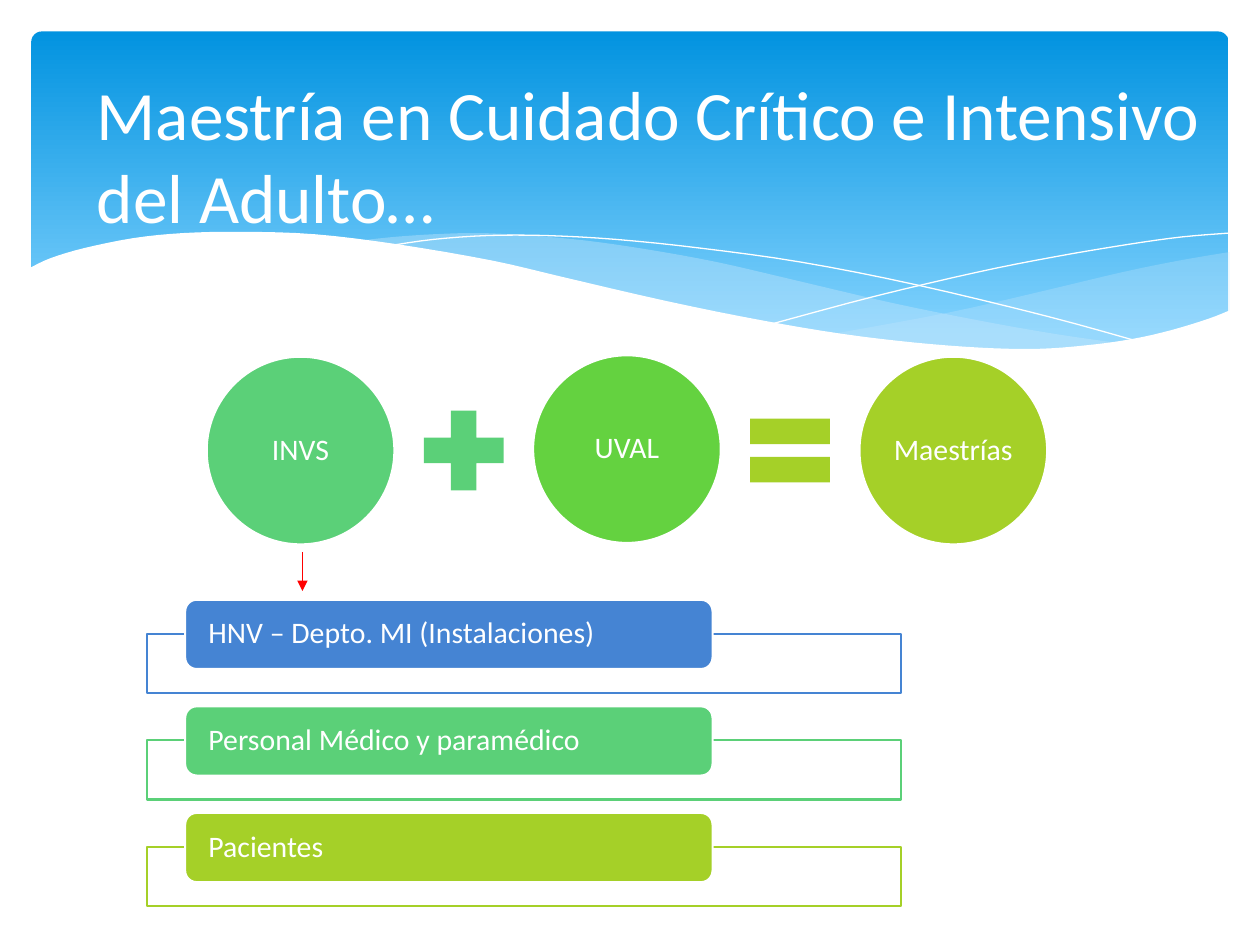
from lxml.etree import SubElement
from pptx import Presentation
from pptx.dml.color import RGBColor
from pptx.enum.shapes import MSO_CONNECTOR, MSO_SHAPE
from pptx.enum.text import MSO_ANCHOR, PP_ALIGN
from pptx.oxml.ns import qn
from pptx.util import Pt

WHITE = RGBColor(0xFF, 0xFF, 0xFF)
SKY_DARK = RGBColor(0x02, 0x93, 0xE0)
SKY_LIGHT = RGBColor(0x83, 0xD3, 0xFE)
MIST = RGBColor(0xC6, 0xE7, 0xFC)
BLUE = RGBColor(0x45, 0x84, 0xD3)
MINT = RGBColor(0x5B, 0xD0, 0x78)
GREEN = RGBColor(0x64, 0xD2, 0x40)
LIME = RGBColor(0xA5, 0xD0, 0x28)
RED = RGBColor(0xFF, 0x00, 0x00)

RIGHT_WAVE_TOP = [(702.7, 144), (673.2, 149), (641.5, 155.5), (599, 165.6),
                  (542.2, 178.6), (475.9, 190.8)]
RIGHT_WAVE_BOTTOM = [(475.9, 190.8), (497.5, 193.7), (527, 197.3), (553.7, 199.2),
                     (586.1, 200.2), (614.9, 198.7), (645.8, 194.4), (673.2, 188.6),
                     (702.7, 177.8)]
LONG_WAVE_TOP = [(205.9, 137.5), (225.4, 135.4), (247.7, 133.9), (273.6, 133.2),
                 (302.4, 134.6), (334.8, 137.5), (370.1, 142.6), (409.7, 149.8),
                 (452.9, 159.8), (508.3, 172.8), (558, 182.9), (602.6, 190.8),
                 (643, 196.6)]
LONG_WAVE_BOTTOM = [(643, 196.6), (610.6, 199.4), (581, 200.2), (547.9, 199.4),
                    (510.5, 195.8), (468, 190.1), (407.5, 178.6), (353.5, 167),
                    (307.4, 155.5), (260.6, 146.2), (205.9, 137.5)]
FALLING_LINE = [(222.5, 140.4), (247.7, 136.8), (278.6, 134.6), (311.8, 134.6),
                (352.1, 136.8), (400.3, 141.8), (457.9, 149.8), (523.4, 162.7),
                (598.3, 180.7), (653, 195.8)]
RISING_LINE = [(441.4, 185), (500.4, 169.2), (558.7, 155.5), (601.9, 146.9),
               (644.4, 139.7), (675.4, 135.4), (702, 133.2)]
FRONT_WAVE = [(16.6, 153.4), (28.8, 147.6), (48.2, 141.8), (76.3, 136.1),
              (105.1, 133.2), (139, 132.5), (180, 133.9), (227.5, 139.7),
              (281.5, 149), (321.8, 158.4), (380.9, 172.1), (434.2, 182.9),
              (481, 190.8), (522.7, 195.8), (560.2, 198.7), (592.6, 199.4),
              (621.4, 197.3), (647.3, 193.7), (669.6, 188.6), (690.5, 182.2),
              (703.4, 177.1)]
FRONT_BASE = [(703.4, 236.9), (16.6, 236.9)]


def smooth_curve(knots, steps=4):
    """Return points of a Catmull-Rom curve through the knots."""
    padded = [knots[0], *knots, knots[-1]]
    points = [knots[0]]
    for before, start, end, after in zip(padded, padded[1:], padded[2:], padded[3:]):
        for step in range(1, steps + 1):
            t = step / steps
            points.append(tuple(
                0.5 * (2 * b + (c - a) * t + (2 * a - 5 * b + 4 * c - d) * t ** 2
                       + (3 * b - a - 3 * c + d) * t ** 3)
                for a, b, c, d in zip(before, start, end, after)))
    return points


def paint(shape, fill=None, line=None, width=1.25, opacity=100):
    """Set the fill, outline and opacity of a shape and drop its shadow."""
    shape.shadow.inherit = False
    if fill is None:
        shape.fill.background()
    else:
        shape.fill.solid()
        shape.fill.fore_color.rgb = fill
        if opacity < 100:
            color = shape.fill._xPr.find(qn("a:solidFill"))[0]
            SubElement(color, qn("a:alpha"), val=str(opacity * 1000))
    if line is None:
        shape.line.fill.background()
    else:
        shape.line.color.rgb = line
        shape.line.width = Pt(width)


def add_box(slide, kind, box, **style):
    """Add a painted preset shape in a box given in points."""
    shape = slide.shapes.add_shape(kind, *map(Pt, box))
    paint(shape, **style)
    return shape


def add_curve(slide, origin, points, close=True, **style):
    """Add a painted freeform whose points are relative to the origin."""
    vertices = [(Pt(origin[0] + x), Pt(origin[1] + y)) for x, y in points]
    builder = slide.shapes.build_freeform(*vertices[0], scale=1.0)
    builder.add_line_segments(vertices[1:], close=close)
    paint(builder.convert_to_shape(), **style)


def write_text(shape, text, size=17, color=WHITE, align=PP_ALIGN.LEFT, spacing=0.9,
               insets=(1.4, 1.4)):
    """Write one formatted paragraph, centred vertically, in a shape."""
    frame = shape.text_frame
    frame.word_wrap = True
    frame.vertical_anchor = MSO_ANCHOR.MIDDLE
    frame.margin_left = frame.margin_right = Pt(insets[0])
    frame.margin_top = frame.margin_bottom = Pt(insets[1])
    paragraph = frame.paragraphs[0]
    paragraph.alignment = align
    paragraph.line_spacing = spacing
    run = paragraph.add_run()
    run.text = text
    run.font.name = "Calibri"
    run.font.size = Pt(size)
    run.font.color.rgb = color


def add_header(slide, box):
    """Draw the gradient banner with its waves."""
    left, top, width, height = box
    panel = add_box(slide, MSO_SHAPE.ROUNDED_RECTANGLE,
                    (left + 18, top + 18, width - 36, height - 42.6))
    panel.adjustments[0] = 0.03
    panel.fill.gradient()
    panel.fill.gradient_angle = 270
    for stop, color, position in zip(panel.fill.gradient_stops,
                                     (SKY_DARK, SKY_LIGHT), (0, 0.9)):
        stop.color.rgb = color
        stop.position = position
    origin = (left, top)
    add_curve(slide, origin, smooth_curve(RIGHT_WAVE_TOP) + smooth_curve(RIGHT_WAVE_BOTTOM),
              fill=MIST, opacity=29)
    add_curve(slide, origin, smooth_curve(LONG_WAVE_TOP) + smooth_curve(LONG_WAVE_BOTTOM),
              fill=MIST, opacity=40)
    for knots in (FALLING_LINE, RISING_LINE):
        add_curve(slide, origin, smooth_curve(knots), close=False, line=WHITE, width=0)
    add_curve(slide, origin, smooth_curve(FRONT_WAVE) + FRONT_BASE, fill=WHITE)


def add_resource_list(slide, box, items):
    """Stack labelled pills, each over an outlined frame."""
    left, top, width, height = box
    frame_height, pill_height, pill_rise = 33.8, 39.6, 19.5
    pitch = (height - pill_rise - frame_height) / (len(items) - 1)
    for index, (text, color) in enumerate(items):
        y = top + index * pitch
        add_box(slide, MSO_SHAPE.RECTANGLE, (left, y + pill_rise, width, frame_height),
                fill=WHITE, line=color, opacity=90)
        pill = add_box(slide, MSO_SHAPE.ROUNDED_RECTANGLE,
                       (left + 21.6, y, width * 0.7, pill_height), fill=color, line=WHITE)
        write_text(pill, text, insets=(11.4, 0))


def add_equation(slide, box, terms, operators):
    """Lay circles in a row with an operator centred in each gap."""
    left, top, width, diameter = box
    pitch = (width - diameter) / (len(terms) - 1)
    size = 61.9
    for index, (text, color, shift) in enumerate(terms):
        circle = add_box(slide, MSO_SHAPE.OVAL,
                         (left + index * pitch, top + shift, diameter, diameter),
                         fill=color, line=WHITE)
        write_text(circle, text, align=PP_ALIGN.CENTER)
    for index, (kind, color) in enumerate(operators):
        x = left + index * pitch + (pitch + diameter - size) / 2
        add_box(slide, kind, (x, top + (diameter - size) / 2, size, size), fill=color)


def add_arrow(slide, box):
    """Draw a red arrow down the left edge of the box."""
    left, top, width, height = box
    arrow = slide.shapes.add_connector(MSO_CONNECTOR.STRAIGHT, Pt(left), Pt(top),
                                       Pt(left + width), Pt(top + height))
    arrow.line.color.rgb = RED
    arrow.line.width = Pt(0.75)
    SubElement(arrow.line._get_or_add_ln(), qn("a:tailEnd"), type="triangle")
    SubElement(arrow._element.spPr, qn("a:effectLst"))


def add_title(slide, box, text):
    """Place the slide title."""
    title = slide.shapes.add_textbox(*map(Pt, box))
    write_text(title, text, size=39.6, spacing=1.0, insets=(7.2, 3.6))


def main():
    """Build and save the slide."""
    presentation = Presentation()
    presentation.slide_width, presentation.slide_height = Pt(720), Pt(540)
    slide = presentation.slides.add_slide(presentation.slide_layouts[6])
    add_header(slide, (0, 0, 720, 237))
    add_resource_list(slide, (84.2, 342.7, 430.6, 175.1), [
        ("HNV – Depto. MI (Instalaciones)", BLUE),
        ("Personal Médico y paramédico", MINT),
        ("Pacientes", LIME)])
    add_equation(slide, (118.1, 203.8, 480.3, 107.3),
                 [("INVS", MINT, 0), ("UVAL", GREEN, -0.8), ("Maestrías", LIME, 0)],
                 [(MSO_SHAPE.MATH_PLUS, MINT), (MSO_SHAPE.MATH_EQUAL, LIME)])
    add_arrow(slide, (172.8, 315.4, 0, 22.3))
    add_title(slide, (48.2, 38.9, 648, 98.6),
              "Maestría en Cuidado Crítico e Intensivo del Adulto…")
    presentation.save("out.pptx")


if __name__ == "__main__":
    main()
